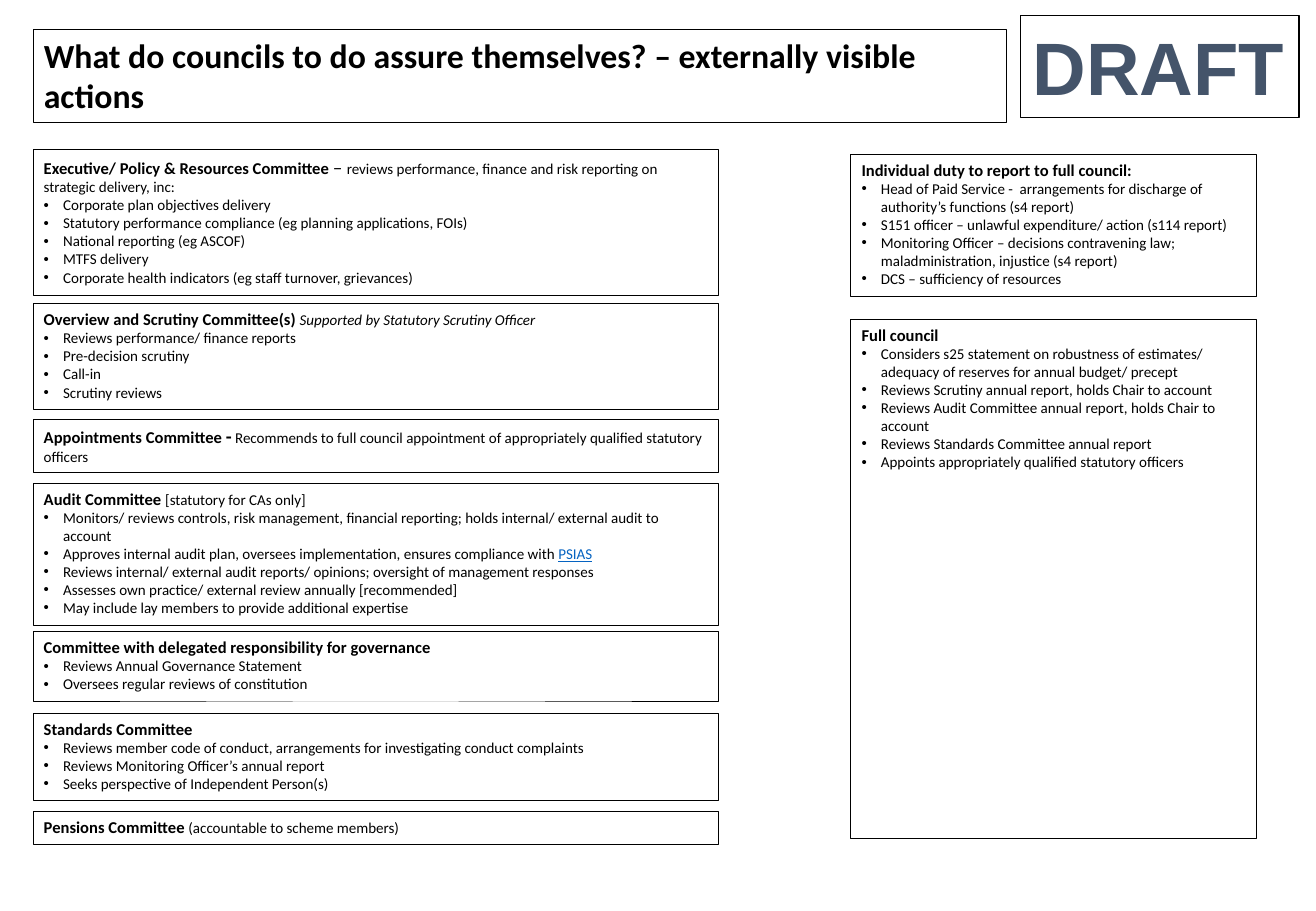
from lxml.etree import SubElement
from pptx import Presentation
from pptx.dml.color import RGBColor
from pptx.enum.text import MSO_ANCHOR
from pptx.oxml.ns import qn
from pptx.util import Inches, Pt

BLACK = RGBColor(0x00, 0x00, 0x00)
SLATE = RGBColor(0x44, 0x54, 0x6A)
LINK_BLUE = RGBColor(0x05, 0x63, 0xC1)

HEADING, DASH, BODY = 9.8, 11.4, 8.9  # text sizes in points
INDENT = Inches(0.16)
LINKED_TERM = "PSIAS"

deck = Presentation()
deck.slide_width, deck.slide_height = Inches(10.83), Inches(7.5)
slide = deck.slides.add_slide(deck.slide_layouts[6])


def add_panel(left, top, width, height, line_width=0.25, inset=0.09):
    panel = slide.shapes.add_textbox(
        Inches(left), Inches(top), Inches(width), Inches(height))
    panel.line.color.rgb = BLACK
    panel.line.width = Pt(line_width)
    frame = panel.text_frame
    frame.word_wrap = True
    frame.vertical_anchor = MSO_ANCHOR.TOP
    frame.margin_left = frame.margin_right = Inches(inset)
    frame.margin_top = frame.margin_bottom = Inches(inset / 2)
    return frame


def add_run(paragraph, text, size, bold=False, italic=False,
            color=BLACK, face="Calibri"):
    run = paragraph.add_run()
    run.text = text
    run.font.size = Pt(size)
    run.font.bold = bold
    run.font.italic = italic
    run.font.color.rgb = color
    run.font.name = face
    return run


# Title and draft stamp
title = add_panel(0.27, 0.24, 8.01, 0.77)
add_run(title.paragraphs[0],
        "What do councils to do assure themselves? – externally visible actions",
        20, bold=True)

stamp = add_panel(8.4, 0.13, 2.29, 0.84, line_width=0.75, inset=0.1)
stamp.word_wrap = False
add_run(stamp.paragraphs[0], "DRAFT", 44, bold=True, color=SLATE, face="Arial")

# Committees: top, height, heading runs (text, size, bold, italic), duties
committees = [
    (1.23, 1.2,
     [("Executive/ Policy & Resources Committee ", HEADING, True),
      ("– ", DASH),
      ("reviews performance, finance and risk reporting on strategic delivery, inc:", BODY)],
     ["Corporate plan objectives delivery",
      "Statutory performance compliance (eg planning applications, FOIs)",
      "National reporting (eg ASCOF)",
      "MTFS delivery",
      "Corporate health indicators (eg staff turnover, grievances)"]),
    (2.5, 0.87,
     [("Overview and Scrutiny Committee(s) ", HEADING, True),
      ("Supported by Statutory Scrutiny Officer", BODY, False, True)],
     ["Reviews performance/ finance reports",
      "Pre-decision scrutiny",
      "Call-in",
      "Scrutiny reviews"]),
    (3.45, 0.44,
     [("Appointments Committee ", HEADING, True),
      ("-", DASH, True),
      (" ", BODY, True),
      ("Recommends to full council appointment of appropriately qualified "
       "statutory officers", BODY)],
     []),
    (3.98, 1.17,
     [("Audit Committee ", HEADING, True),
      ("[statutory for CAs only]", BODY)],
     ["Monitors/ reviews controls, risk management, financial reporting; "
      "holds internal/ external audit to account",
      "Approves internal audit plan, oversees implementation, "
      "ensures compliance with PSIAS",
      "Reviews internal/ external audit reports/ opinions; "
      "oversight of management responses",
      "Assesses own practice/ external review annually [recommended]",
      "May include lay members to provide additional expertise"]),
    (5.2, 0.57,
     [("Committee with delegated responsibility for governance", HEADING, True)],
     ["Reviews Annual Governance Statement",
      "Oversees regular reviews of constitution"]),
    (5.87, 0.72,
     [("Standards Committee", HEADING, True)],
     ["Reviews member code of conduct, arrangements for investigating "
      "conduct complaints",
      "Reviews Monitoring Officer’s annual report",
      "Seeks perspective of Independent Person(s)"]),
    (6.68, 0.27,
     [("Pensions Committee ", HEADING, True),
      ("(accountable to scheme members)", BODY)],
     []),
]

# Full council and the officers who report to it
council = [
    (1.27, 1.17,
     [("Individual duty to report to full council:", HEADING, True)],
     ["Head of Paid Service -  arrangements for discharge of "
      "authority’s functions (s4 report)",
      "S151 officer – unlawful expenditure/ action (s114 report)",
      "Monitoring Officer – decisions contravening law; "
      "maladministration, injustice (s4 report)",
      "DCS – sufficiency of resources"]),
    (2.63, 4.27,
     [("Full council", HEADING, True)],
     ["Considers s25 statement on robustness of estimates/ adequacy of "
      "reserves for annual budget/ precept",
      "Reviews Scrutiny annual report, holds Chair to account",
      "Reviews Audit Committee annual report, holds Chair to account",
      "Reviews Standards Committee annual report",
      "Appoints appropriately qualified statutory officers"]),
]

# Draw both columns
for left, width, bodies in [(0.27, 5.64, committees), (7, 3.34, council)]:
    for top, height, heading, duties in bodies:
        frame = add_panel(left, top, width, height)
        for part in heading:
            add_run(frame.paragraphs[0], *part)

        for duty in duties:
            paragraph = frame.add_paragraph()
            properties = paragraph._p.get_or_add_pPr()
            properties.set("marL", str(INDENT))
            properties.set("indent", str(-INDENT))
            SubElement(properties, qn("a:buFont")).set("typeface", "Arial")
            SubElement(properties, qn("a:buChar")).set("char", "•")

            before, term, after = duty.partition(LINKED_TERM)
            add_run(paragraph, before, BODY)
            if term:
                add_run(paragraph, term, BODY, color=LINK_BLUE).font.underline = True
            if after:
                add_run(paragraph, after, BODY)

deck.save("out.pptx")
